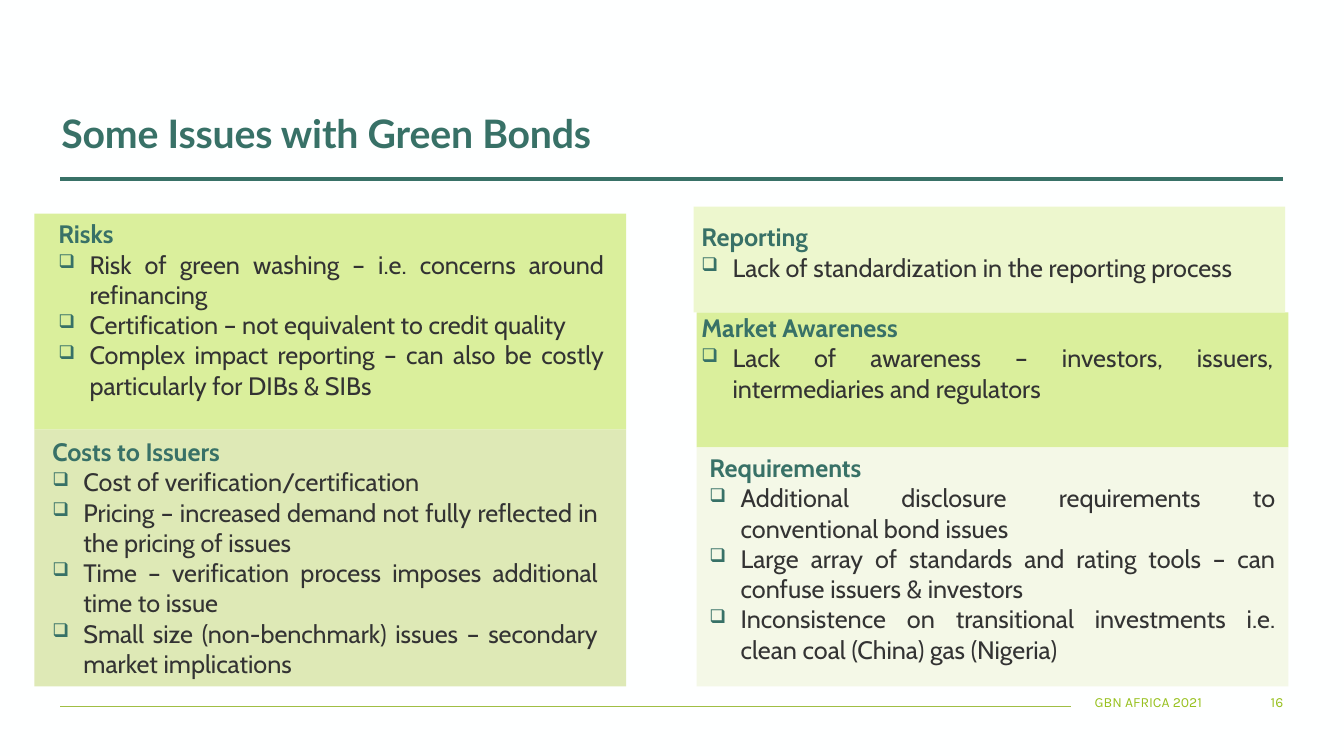
"""Build the slide on issues with green bonds."""
from dataclasses import dataclass

from lxml.etree import SubElement as Sub
from pptx import Presentation
from pptx.dml.color import RGBColor as Rgb
from pptx.enum.shapes import MSO_CONNECTOR as Link, MSO_SHAPE as Shape
from pptx.enum.text import MSO_ANCHOR as Anchor, PP_ALIGN as Align
from pptx.oxml.ns import qn
from pptx.slide import Slide
from pptx.text.text import TextFrame as Frame, _Paragraph as Para
from pptx.util import Inches, Pt

WIDTH, HEIGHT = Inches(13.333), Inches(7.5)


@dataclass(frozen=True)
class Theme:
    back: str = "FEFFFF"
    head: str = "387167"
    mark: str = "377167"
    body: str = "333333"
    foot: str = "98C11F"
    rule: str = "A0BE44"
    lime: str = "DAEF9C"
    pale: str = "EDF7CE"
    mist: str = "F4F8E7"
    sage: str = "DEE9B6"
    title: float = 28
    text: float = 18
    small: float = 10
    gap: float = 21.6


@dataclass(frozen=True)
class Box:
    """A place on the slide, in percent of its width and height."""
    left: float
    top: float
    width: float
    height: float

    def place(self) -> tuple[int, int, int, int]:
        return (across(self.left), down(self.top),
                across(self.width), down(self.height))


@dataclass(frozen=True)
class Rule:
    left: float
    right: float
    top: float
    color: str
    weight: float


@dataclass(frozen=True)
class Panel:
    box: Box
    color: str


@dataclass(frozen=True)
class Label:
    box: Box
    text: str
    font: str
    size: float
    color: str
    bold: bool = False
    align: Align = Align.LEFT
    anchor: Anchor = Anchor.BOTTOM
    track: int = 0


@dataclass(frozen=True)
class Topic:
    head: str
    points: tuple[str, ...]


@dataclass(frozen=True)
class Block:
    box: Box
    topics: tuple[Topic, ...]


LOOK = Theme()
SPAN = 44.03
LEFT, RIGHT = 2.55, 51.83

RULES = (
    Rule(4.5, 95.48, 23.73, LOOK.head, 3),
    Rule(4.5, 79.72, 93.47, LOOK.rule, 0.6),
)
PANELS = (
    Panel(Box(RIGHT, 41.33, SPAN, 17.87), LOOK.lime),
    Panel(Box(51.6, 27.33, SPAN, 14), LOOK.pale),
    Panel(Box(RIGHT, 59.2, SPAN, 31.6), LOOK.mist),
    Panel(Box(LEFT, 56.8, SPAN, 34), LOOK.sage),
    Panel(Box(LEFT, 28.27, SPAN, 28.53), LOOK.lime),
)
LABELS = (
    Label(Box(4.57, 15.2, 53.93, 6.27), "Some Issues with Green Bonds", "Lato",
          LOOK.title, LOOK.head, bold=True, anchor=Anchor.TOP, track=-10),
    Label(Box(81.45, 92.13, 9.83, 1.87), "GBN AFRICA 2021", "Karla",
          LOOK.small, LOOK.foot),
    Label(Box(92.78, 92.13, 2.7, 1.87), "16", "Karla",
          LOOK.small, LOOK.foot, align=Align.RIGHT),
)
BLOCKS = (
    Block(Box(3.6, 28.27, 42.08, 25.6), (
        Topic("Risks", (
            "Risk of green washing – i.e. concerns around refinancing",
            "Certification – not equivalent to credit quality",
            "Complex impact reporting – can also be costly particularly for DIBs & SIBs")),)),
    Block(Box(3.15, 57.07, 42.08, 33.6), (
        Topic("Costs to Issuers", (
            "Cost of verification/certification",
            "Pricing – increased demand not fully reflected in the pricing of issues",
            "Time – verification process imposes additional time to issue",
            "Small size (non-benchmark) issues – secondary market implications")),)),
    Block(Box(52.05, 59.2, 43.58, 29.6), (
        Topic("Requirements", (
            "Additional disclosure requirements to conventional bond issues",
            "Large array of standards and rating tools – can confuse issuers & investors",
            "Inconsistence on transitional investments i.e. clean coal (China) gas (Nigeria)")),)),
    Block(Box(51.45, 28.67, SPAN, 25.6), (
        Topic("Reporting", ("Lack of standardization in the reporting process",)),
        Topic("Market Awareness", (
            "Lack of awareness – investors, issuers, intermediaries and regulators",)))),
)


def across(share: float) -> int:
    return round(WIDTH * share / 100)


def down(share: float) -> int:
    return round(HEIGHT * share / 100)


def style(para: Para, font: str, size: float, color: str, bold: bool) -> None:
    para.font.name = font
    para.font.size = Pt(size)
    para.font.bold = bold
    para.font.color.rgb = Rgb.from_string(color)


def bullet(para: Para) -> None:
    props = para._p.get_or_add_pPr()
    props.set("marL", str(Inches(0.31)))
    props.set("indent", str(-Inches(0.31)))
    Sub(Sub(props, qn("a:buClr")), qn("a:srgbClr")).set("val", LOOK.mark)
    Sub(props, qn("a:buSzPct")).set("val", "75000")
    Sub(props, qn("a:buChar")).set("char", "❑")


def add_rule(slide: Slide, rule: Rule) -> None:
    top = down(rule.top)
    line = slide.shapes.add_connector(
        Link.STRAIGHT, across(rule.left), top, across(rule.right), top)
    line.line.color.rgb = Rgb.from_string(rule.color)
    line.line.width = Pt(rule.weight)
    Sub(line._element.spPr, qn("a:effectLst"))


def add_panel(slide: Slide, panel: Panel) -> None:
    shape = slide.shapes.add_shape(Shape.RECTANGLE, *panel.box.place())
    shape.shadow.inherit = False
    shape.fill.solid()
    shape.fill.fore_color.rgb = Rgb.from_string(panel.color)
    shape.line.fill.background()


def add_frame(slide: Slide, box: Box) -> Frame:
    frame = slide.shapes.add_textbox(*box.place()).text_frame
    frame.word_wrap = True
    return frame


def add_label(slide: Slide, label: Label) -> None:
    frame = add_frame(slide, label.box)
    frame.margin_left = frame.margin_right = 0
    frame.margin_top = frame.margin_bottom = 0
    frame.vertical_anchor = label.anchor
    para = frame.paragraphs[0]
    para.text = label.text
    para.alignment = label.align
    if label.track:
        para.line_spacing = 0.9
        para.runs[0]._r.get_or_add_rPr().set("spc", str(label.track))
    style(para, label.font, label.size, label.color, label.bold)


def add_block(slide: Slide, block: Block) -> None:
    frame = add_frame(slide, block.box)
    for rank, topic in enumerate(block.topics):
        head = frame.add_paragraph() if rank else frame.paragraphs[0]
        head.text = topic.head
        head.alignment = Align.JUSTIFY
        if rank:
            head.space_before = Pt(LOOK.gap)
        style(head, "Cabin", LOOK.text, LOOK.head, True)
        for point in topic.points:
            para = frame.add_paragraph()
            para.text = point
            para.alignment = Align.JUSTIFY
            bullet(para)
            style(para, "Cabin", LOOK.text, LOOK.body, False)


def main() -> None:
    deck = Presentation()
    deck.slide_width, deck.slide_height = WIDTH, HEIGHT
    slide = deck.slides.add_slide(deck.slide_layouts[6])
    fill = slide.background.fill
    fill.solid()
    fill.fore_color.rgb = Rgb.from_string(LOOK.back)
    for draw, parts in ((add_rule, RULES), (add_panel, PANELS),
                        (add_label, LABELS), (add_block, BLOCKS)):
        for part in parts:
            draw(slide, part)
    deck.save("out.pptx")


if __name__ == "__main__":
    main()
